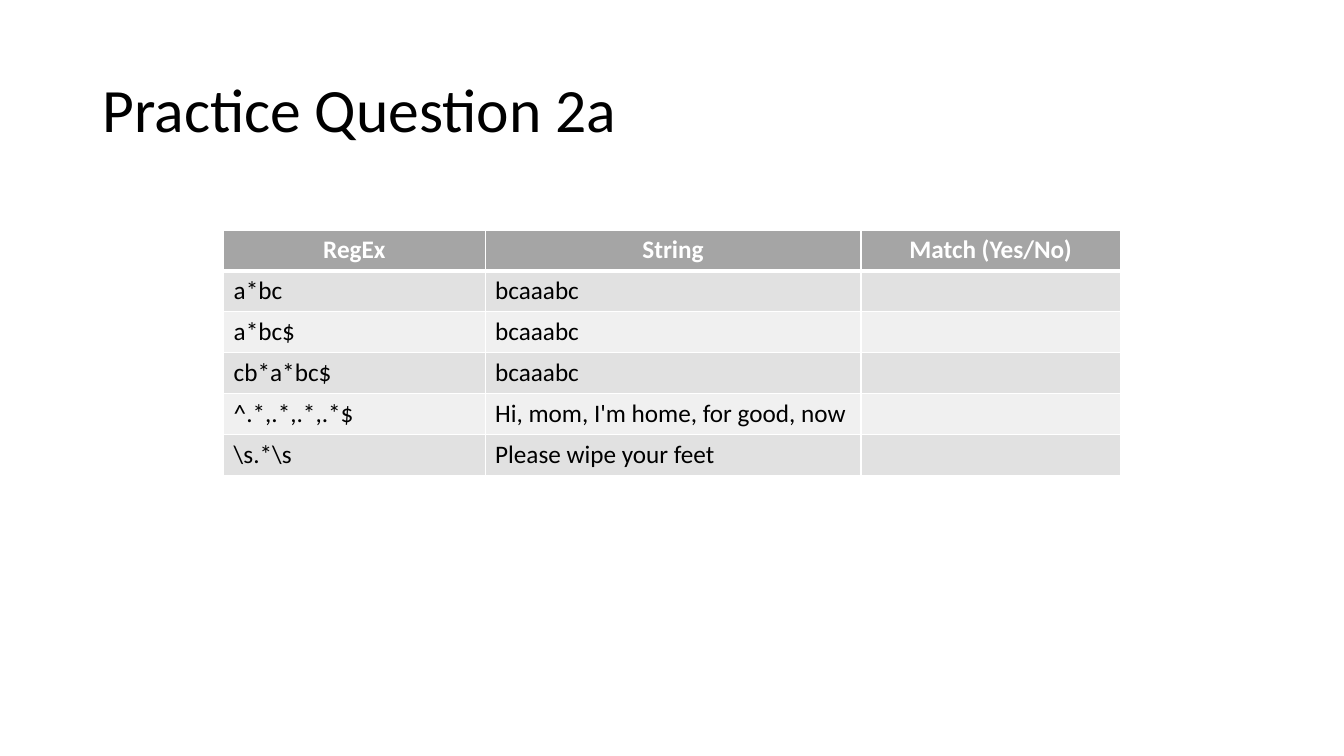
from dataclasses import dataclass

import pptx
import pptx.dml.color
import pptx.enum.text
import pptx.oxml
import pptx.oxml.ns
import pptx.util

SCALE = 9525  # EMU in one px, at 96 px to the inch


@dataclass(frozen=True)
class Theme:
    face: str = "Calibri"
    ink: str = "000000"
    paper: str = "FFFFFF"
    head: str = "A5A5A5"
    bands: tuple = ("E1E1E1", "F0F0F0")
    title: int = 44
    body: int = 18
    thin: int = 1
    thick: int = 3


def px(count):
    return pptx.util.Emu(count * SCALE)


def rgb(code):
    return pptx.dml.color.RGBColor.from_string(code)


class Deck:
    def __init__(self, theme, width, height):
        self.theme = theme
        self.show = pptx.Presentation()
        self.show.slide_width = px(width)
        self.show.slide_height = px(height)
        self.slide = self.show.slides.add_slide(self.show.slide_layouts[5])

    def style(self, para, size, color, bold=False):
        font = para.font
        font.name = self.theme.face
        font.size = pptx.util.Pt(size)
        font.bold = bold
        font.color.rgb = rgb(color)

    def title(self, text, left, top, width, height):
        shape = self.slide.shapes.title
        shape.left, shape.top = px(left), px(top)
        shape.width, shape.height = px(width), px(height)
        frame = shape.text_frame
        frame.text = text
        frame.auto_size = pptx.enum.text.MSO_AUTO_SIZE.NONE
        frame.vertical_anchor = pptx.enum.text.MSO_ANCHOR.MIDDLE
        para = frame.paragraphs[0]
        para.alignment = pptx.enum.text.PP_ALIGN.LEFT
        para.line_spacing = 0.9
        self.style(para, self.theme.title, self.theme.ink)

    def border(self, cell, side, points):
        line = pptx.oxml.parse_xml(
            f'<a:ln{side} {pptx.oxml.ns.nsdecls("a")} w="{pptx.util.Pt(points)}">'
            f'<a:solidFill><a:srgbClr val="{self.theme.paper}"/></a:solidFill>'
            f'</a:ln{side}>')
        cell._tc.get_or_add_tcPr().append(line)

    def cell(self, cell, text, row):
        theme = self.theme
        head = row == 0
        for side in "LRTB":
            rule = (side, row) in (("B", 0), ("T", 1))
            self.border(cell, side, theme.thick if rule else theme.thin)
        cell.fill.solid()
        cell.fill.fore_color.rgb = rgb(
            theme.head if head else theme.bands[(row - 1) % 2])
        cell.text = text
        para = cell.text_frame.paragraphs[0]
        align = pptx.enum.text.PP_ALIGN
        para.alignment = align.CENTER if head else align.LEFT
        self.style(para, theme.body, theme.paper if head else theme.ink, head)

    def table(self, rows, left, top, widths, height):
        """Draw rows of text, the first as header; height is that of one row."""
        grid = self.slide.shapes.add_table(
            len(rows), len(widths), px(left), px(top),
            px(sum(widths)), px(height * len(rows))).table
        for column, width in zip(grid.columns, widths):
            column.width = px(width)
        for row, texts in enumerate(rows):
            grid.rows[row].height = px(height)
            for col, text in enumerate(texts):
                self.cell(grid.cell(row, col), text, row)


def main():
    deck = Deck(Theme(), 1280, 720)
    deck.title("Practice Question 2a", 88, 38, 1104, 139)
    tests = [
        ("RegEx", "String", "Match (Yes/No)"),
        ("a*bc", "bcaaabc", ""),
        ("a*bc$", "bcaaabc", ""),
        ("cb*a*bc$", "bcaaabc", ""),
        ("^.*,.*,.*,.*$", "Hi, mom, I'm home, for good, now", ""),
        (r"\s.*\s", "Please wipe your feet", ""),
    ]
    deck.table(tests, 213, 219, (249, 358, 247), 39)
    deck.show.save("out.pptx")


if __name__ == "__main__":
    main()
